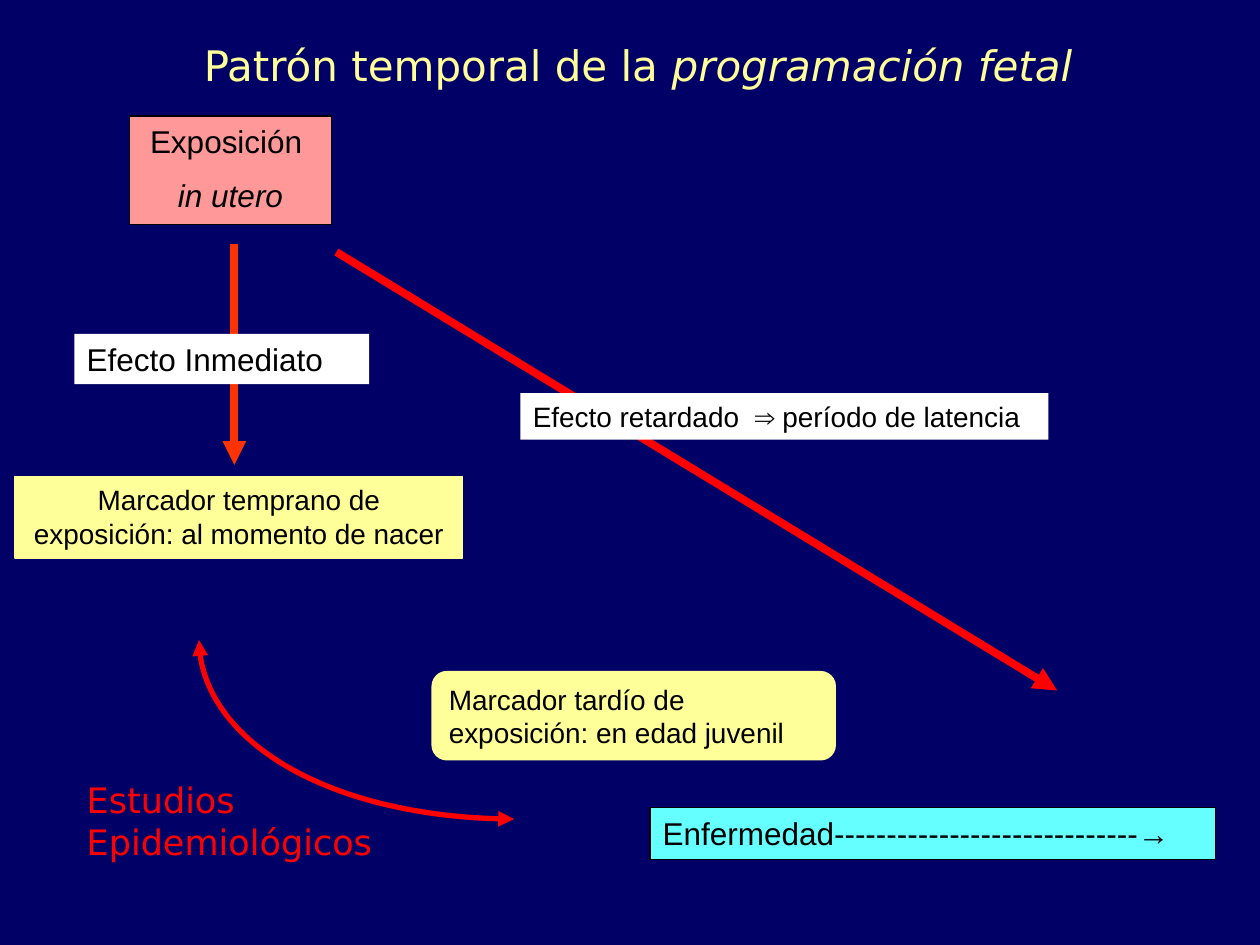
from lxml.etree import SubElement
from pptx import Presentation
from pptx.dml.color import RGBColor
from pptx.enum.shapes import MSO_CONNECTOR, MSO_SHAPE
from pptx.enum.text import MSO_ANCHOR, MSO_AUTO_SIZE, PP_ALIGN
from pptx.oxml.ns import qn
from pptx.util import Inches, Pt

NAVY, RED, ORANGE = "000066", "FF0000", "FF3300"
YELLOW, PINK, CYAN = "FFFF99", "FF9999", "66FFFF"
WHITE, BLACK = "FFFFFF", "000000"
RECTANGLE, ROUNDED = MSO_SHAPE.RECTANGLE, MSO_SHAPE.ROUNDED_RECTANGLE
LEFT, CENTER = PP_ALIGN.LEFT, PP_ALIGN.CENTER

PANELS = [
    ((1.03, 0.92, 1.6, 0.86), RECTANGLE, PINK, BLACK, 18, CENTER,
     [[("Exposición ", False)], [("in utero", True)]]),
    ((0.12, 3.78, 3.55, 0.65), RECTANGLE, YELLOW, YELLOW, 16, CENTER,
     [[("Marcador temprano de exposición: al momento de nacer", False)]]),
    ((0.59, 2.65, 2.34, 0.4), RECTANGLE, WHITE, None, 18, LEFT,
     [[("Efecto Inmediato", False)]]),
    ((4.13, 3.12, 4.19, 0.37), RECTANGLE, WHITE, None, 16, LEFT,
     [[("Efecto retardado  ⇒ período de latencia", False)]]),
    ((5.16, 6.41, 4.49, 0.41), RECTANGLE, CYAN, BLACK, 18, LEFT,
     [[("Enfermedad-----------------------------→", False)]]),
    ((3.43, 5.33, 3.2, 0.7), ROUNDED, YELLOW, YELLOW, 16, LEFT,
     [[("Marcador tardío de exposición: en edad juvenil", False)]]),
]


def color(value):
    return RGBColor.from_string(value)


def set_attributes(target, values):
    for name, value in values.items():
        setattr(target, name, value)


def style_line(line, value, width):
    line.color.rgb = color(value)
    line.width = Pt(width)


def add_arrowheads(shape, *ends):
    line = shape.line._get_or_add_ln()
    for end in ends:
        SubElement(line, qn(f"a:{end}")).set("type", "triangle")


def write_text(shape, paragraphs, font, size, value, alignment, wrap=True):
    frame = shape.text_frame
    set_attributes(frame, {
        "word_wrap": wrap,
        "auto_size": MSO_AUTO_SIZE.SHAPE_TO_FIT_TEXT,
        "vertical_anchor": MSO_ANCHOR.TOP,
    })
    for index, runs in enumerate(paragraphs):
        paragraph = frame.add_paragraph() if index else frame.paragraphs[0]
        set_attributes(paragraph, {
            "alignment": alignment,
            "space_before": Pt(size / 2 if index else 0),
        })
        for text, italic in runs:
            run = paragraph.add_run()
            run.text = text
            set_attributes(run.font, {"name": font, "size": Pt(size), "italic": italic})
            run.font.color.rgb = color(value)


def add_title(slide, box):
    title = slide.shapes.title
    set_attributes(title, dict(zip(("left", "top", "width", "height"), map(Inches, box))))
    runs = [("Patrón temporal de la ", False), ("programación fetal", True)]
    write_text(title, [runs], "DejaVu Sans", 24, YELLOW, CENTER, wrap=False)


def add_panel(slide, box, kind, fill, outline, size, alignment, paragraphs):
    shape = slide.shapes.add_shape(kind, *map(Inches, box))
    shape.shadow.inherit = False
    shape.fill.solid()
    shape.fill.fore_color.rgb = color(fill)
    if outline:
        style_line(shape.line, outline, 0.75)
    else:
        shape.line.fill.background()
    write_text(shape, paragraphs, "Arial", size, BLACK, alignment)


def add_caption(slide, box):
    caption = slide.shapes.add_textbox(*map(Inches, box))
    write_text(caption, [[("Estudios Epidemiológicos", False)]], "DejaVu Sans", 20, RED, LEFT)


def add_arrow(slide, start, end, value):
    arrow = slide.shapes.add_connector(MSO_CONNECTOR.STRAIGHT, *map(Inches, start + end))
    style_line(arrow.line, value, 4.5)
    add_arrowheads(arrow, "tailEnd")
    SubElement(arrow._element.spPr, qn("a:effectLst"))


def add_curve(slide, box):
    left, top, width, height = map(Inches, box)
    builder = slide.shapes.build_freeform(left, top)
    builder.add_line_segments([(left + width, top + height)], close=False)
    curve = builder.convert_to_shape()
    curve.shadow.inherit = False
    curve.fill.background()
    style_line(curve.line, RED, 3)
    add_arrowheads(curve, "headEnd", "tailEnd")
    segment = next(curve._element.iter(qn("a:lnTo")))
    outline = segment.getparent()
    outline.remove(segment)
    bezier = SubElement(outline, qn("a:cubicBezTo"))
    for x, y in ((0, 0.55), (0.45, 1), (1, 1)):
        point = SubElement(bezier, qn("a:pt"))
        point.set("x", str(int(width * x)))
        point.set("y", str(int(height * y)))


def main():
    presentation = Presentation()
    set_attributes(presentation, {"slide_width": Inches(10), "slide_height": Inches(7.5)})
    slide = presentation.slides.add_slide(presentation.slide_layouts[5])
    slide.background.fill.solid()
    slide.background.fill.fore_color.rgb = color(NAVY)
    add_title(slide, (1.5, 0.26, 7.13, 0.5))
    add_arrow(slide, (1.86, 1.94), (1.86, 3.69), ORANGE)
    add_arrow(slide, (2.67, 2), (8.39, 5.48), RED)
    for panel in PANELS:
        add_panel(slide, *panel)
    add_curve(slide, (1.58, 5.08, 2.5, 1.42))
    add_caption(slide, (0.59, 6.13, 2.83, 0.77))
    presentation.save("out.pptx")


if __name__ == "__main__":
    main()
